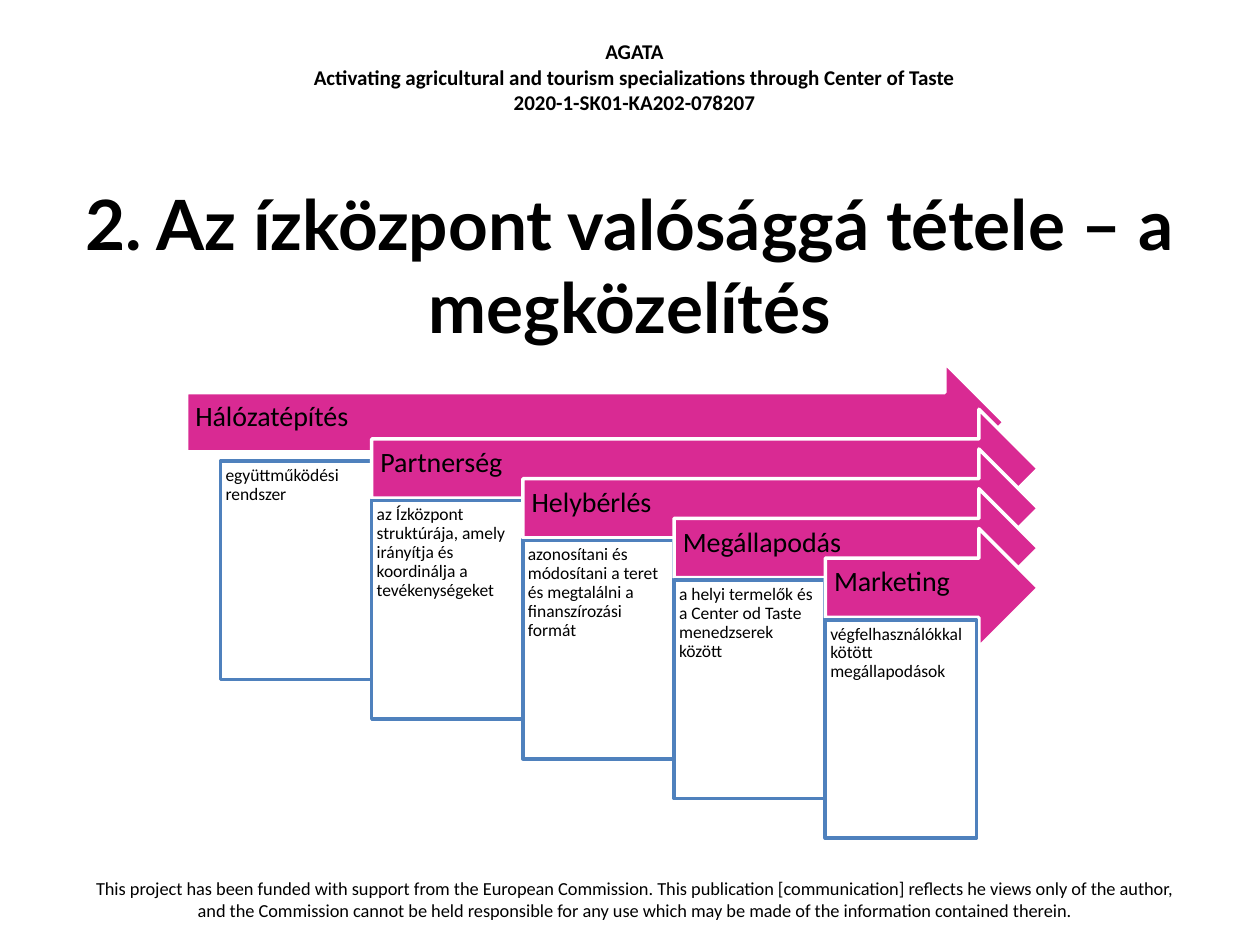
"""Build the slide with five cascading arrows and their descriptions."""
from dataclasses import dataclass

from pptx import Presentation
from pptx.dml.color import RGBColor
from pptx.enum.shapes import MSO_SHAPE
from pptx.enum.text import MSO_ANCHOR, MSO_AUTO_SIZE, PP_ALIGN
from pptx.util import Pt


@dataclass(frozen=True)
class Theme:
    ink: RGBColor = RGBColor(0x00, 0x00, 0x00)
    paper: RGBColor = RGBColor(0xFF, 0xFF, 0xFF)
    magenta: RGBColor = RGBColor(0xD9, 0x2A, 0x93)
    blue: RGBColor = RGBColor(0x4F, 0x81, 0xBD)
    body_font: str = "Calibri"
    title_font: str = "Lato"
    title_size: float = 39.6
    arrow_size: float = 16
    header_size: float = 12
    footer_size: float = 10.5
    detail_size: float = 10


theme = Theme()


def write(shape, lines, size, align=PP_ALIGN.LEFT, anchor=MSO_ANCHOR.TOP,
          font=theme.body_font, bold=False, spacing=1.0, insets=(7.2, 3.6, 7.2, 3.6)):
    frame = shape.text_frame
    frame.word_wrap = True
    frame.auto_size = MSO_AUTO_SIZE.NONE
    frame.vertical_anchor = anchor
    frame.margin_left, frame.margin_top, frame.margin_right, frame.margin_bottom = map(Pt, insets)
    for index, line in enumerate(lines):
        para = frame.add_paragraph() if index else frame.paragraphs[0]
        para.alignment = align
        para.line_spacing = spacing
        span = para.add_run()
        span.text = line
        span.font.name = font
        span.font.size = Pt(size)
        span.font.bold = bold
        span.font.color.rgb = theme.ink


def add_panel(kind, left, top, width, height, fill, line):
    panel = slide.shapes.add_shape(kind, Pt(left), Pt(top), Pt(width), Pt(height))
    panel.shadow.inherit = False
    panel.fill.solid()
    panel.fill.fore_color.rgb = fill
    panel.line.color.rgb = line
    panel.line.width = Pt(2)
    return panel


deck = Presentation()
deck.slide_width, deck.slide_height = Pt(720), Pt(540)
slide = deck.slides.add_slide(deck.slide_layouts[5])

header = slide.shapes.add_textbox(Pt(149.8), Pt(18.7), Pt(425.5), Pt(51))
write(header, [
    "AGATA",
    "Activating agricultural and tourism specializations through Center of Taste",
    "2020-1-SK01-KA202-078207",
], theme.header_size, PP_ALIGN.CENTER, bold=True)

footer = slide.shapes.add_textbox(Pt(38.9), Pt(497.5), Pt(648), Pt(34))
write(footer, [
    "This project has been funded with support from the European Commission. "
    "This publication [communication] reflects he views only of the author, "
    "and the Commission cannot be held responsible for any use which may be made "
    "of the information contained therein.",
], theme.footer_size, PP_ALIGN.CENTER)

title = slide.shapes.title
title.left, title.top, title.width, title.height = Pt(36), Pt(105.8), Pt(648), Pt(90)
write(title, ["2. Az ízközpont valósággá tétele – a megközelítés"], theme.title_size,
      PP_ALIGN.CENTER, MSO_ANCHOR.MIDDLE, theme.title_font, bold=True)

steps = [
    ("Hálózatépítés", "együttműködési rendszer"),
    ("Partnerség", "az Ízközpont struktúrája, amely irányítja és koordinálja a tevékenységeket"),
    ("Helybérlés", "azonosítani és módosítani a teret és megtalálni a finanszírozási formát"),
    ("Megállapodás", "a helyi termelők és a Center od Taste menedzserek között"),
    ("Marketing", "végfelhasználókkal kötött megállapodások"),
]
box_left, box_top, box_width, box_height = 126, 263.4, 86.4, 124.8
step_down, arrow_height = 22.7, 67.8
for index, (name, detail) in enumerate(steps):
    left = box_left + index * box_width
    top = box_top + index * step_down
    if index == 0:
        arrow_left, arrow_top, arrow_right = 106.6, 207.4, 573.8
    else:
        arrow_left, arrow_top, arrow_right = left, top - 52.2, 593.3
    arrow = add_panel(MSO_SHAPE.RIGHT_ARROW, arrow_left, arrow_top,
                      arrow_right - arrow_left, arrow_height, theme.magenta, theme.paper)
    write(arrow, [name], theme.arrow_size, anchor=MSO_ANCHOR.MIDDLE,
          spacing=0.9, insets=(5, 5, 20, 10.8))
    box = add_panel(MSO_SHAPE.RECTANGLE, left, top, box_width, box_height,
                    theme.paper, theme.blue)
    write(box, [detail], theme.detail_size, spacing=0.9, insets=(2.9, 2.9, 2.9, 2.9))

deck.save("out.pptx")
